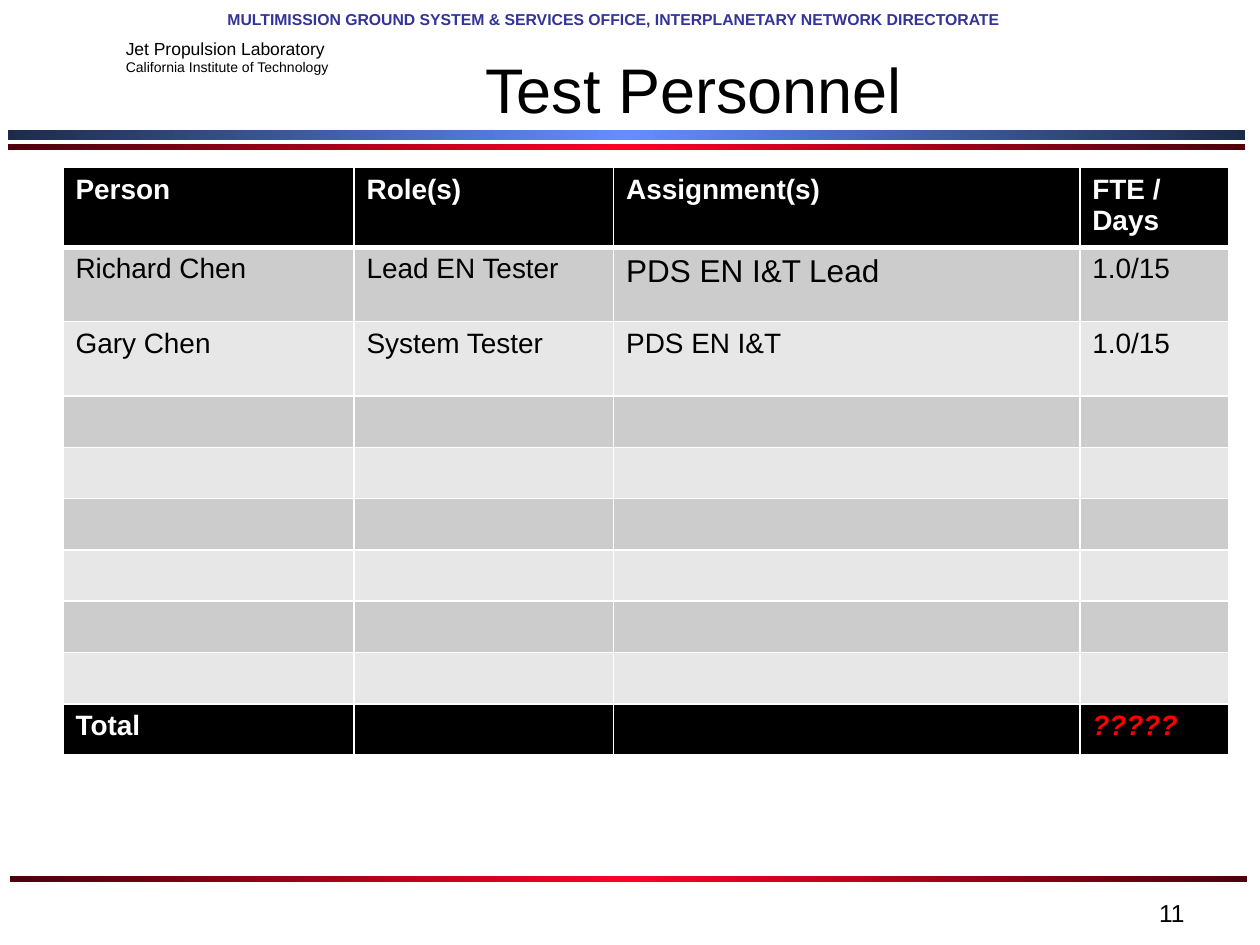
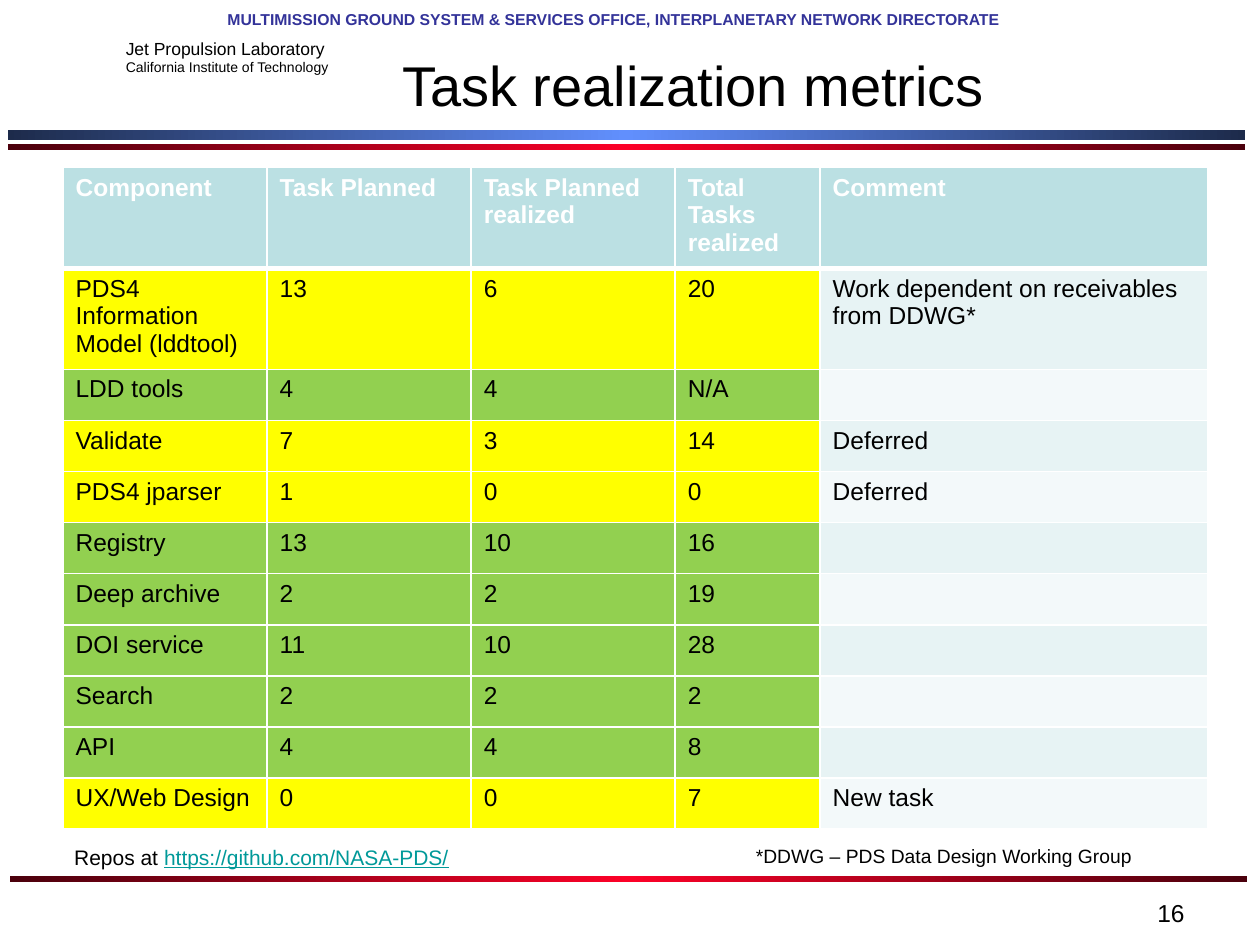
from copy import deepcopy

from lxml import etree
from pptx import Presentation
from pptx.dml.color import RGBColor
from pptx.enum import shapes, text
from pptx.oxml.ns import qn
from pptx.util import Inches, Pt

BLACK = RGBColor(0x00, 0x00, 0x00)
WHITE = RGBColor(0xFF, 0xFF, 0xFF)
RED = RGBColor(0xFF, 0x00, 0x00)
INDIGO = RGBColor(0x33, 0x33, 0x99)
TEAL = RGBColor(0x00, 0x99, 0x99)
NAVY = RGBColor(0x1D, 0x2B, 0x4B)
SKY = RGBColor(0x61, 0x8F, 0xFD)
MAROON = RGBColor(0x4B, 0x00, 0x0C)
SCARLET = RGBColor(0xFC, 0x01, 0x28)
GRAYS = (RGBColor(0xCC, 0xCC, 0xCC), RGBColor(0xE7, 0xE7, 0xE7))
PALE_BLUES = (RGBColor(0xE7, 0xF3, 0xF4), RGBColor(0xF3, 0xF9, 0xFA))
LIGHT_BLUE = RGBColor(0xBB, 0xE0, 0xE3)
YELLOW = RGBColor(0xFF, 0xFF, 0x00)
GREEN = RGBColor(0x92, 0xD0, 0x50)
FONT = "Arial"
LEFT, CENTER, RIGHT = text.PP_ALIGN.LEFT, text.PP_ALIGN.CENTER, text.PP_ALIGN.RIGHT

OFFICE = "MULTIMISSION GROUND SYSTEM & SERVICES OFFICE, INTERPLANETARY NETWORK DIRECTORATE"
LAB = [("Jet Propulsion Laboratory", 10), ("California Institute of Technology", 8)]
BANDS = [
    (0.06, 1.03, 0.08, NAVY, SKY),
    (0.06, 1.14, 0.05, MAROON, SCARLET),
    (0.08, 6.95, 0.05, MAROON, SCARLET),
]
BAND_WIDTH = 9.82

PERSONNEL_COLS = [2.31, 2.06, 3.7, 1.18]
PERSONNEL = [
    ("Person", "Role(s)", "Assignment(s)", "FTE / Days"),
    ("Richard Chen", "Lead EN Tester", "PDS EN I&T Lead", "1.0/15"),
    ("Gary Chen", "System Tester", "PDS EN I&T", "1.0/15"),
    *[("", "", "", "")] * 6,
    ("Total", "", "", "?????"),
]

METRICS_COLS = [1.62, 1.62, 1.62, 1.15, 3.08]
METRICS_HEAD = ("Component", "Task Planned", "Task Planned realized", "Total Tasks realized", "Comment")
METRICS = [
    (YELLOW, "PDS4 Information Model (lddtool)", "13", "6", "20", "Work dependent on receivables from DDWG*"),
    (GREEN, "LDD tools", "4", "4", "N/A", ""),
    (YELLOW, "Validate", "7", "3", "14", "Deferred"),
    (YELLOW, "PDS4 jparser", "1", "0", "0", "Deferred"),
    (GREEN, "Registry", "13", "10", "16", ""),
    (GREEN, "Deep archive", "2", "2", "19", ""),
    (GREEN, "DOI service", "11", "10", "28", ""),
    (GREEN, "Search", "2", "2", "2", ""),
    (GREEN, "API", "4", "4", "8", ""),
    (YELLOW, "UX/Web Design", "0", "0", "7", "New task"),
]


def add_run(p, words, size, color=BLACK, bold=False, italic=False, underline=False):
    r = p.add_run()
    r.text = words
    f = r.font
    f.name, f.size, f.bold, f.italic, f.underline = FONT, Pt(size), bold, italic, underline
    f.color.rgb = color


def add_box(s, left, top, width, height, align=LEFT):
    tf = s.shapes.add_textbox(Inches(left), Inches(top), Inches(width), Inches(height)).text_frame
    tf.word_wrap = True
    tf.paragraphs[0].alignment = align
    return tf


def add_band(s, left, top, height, edge, middle):
    sp = s.shapes.add_shape(shapes.MSO_SHAPE.RECTANGLE, Inches(left), Inches(top),
                            Inches(BAND_WIDTH), Inches(height))
    sp.shadow.inherit = False
    sp.line.fill.background()
    sp.fill.gradient()
    sp.fill.gradient_angle = 0
    stops = sp._element.spPr.find(".//" + qn("a:gsLst"))
    stops.append(deepcopy(stops[0]))
    for stop, position, color in zip(sp.fill.gradient_stops, (0, 0.5, 1), (edge, middle, edge)):
        stop.position = position
        stop.color.rgb = color


def add_page(prs, title, title_size, number):
    s = prs.slides.add_slide(prs.slide_layouts[6])
    for band in BANDS:
        add_band(s, *band)

    tf = add_box(s, 1.67, 0.08, 6.5, 0.17, CENTER)
    tf.margin_left = tf.margin_top = tf.margin_bottom = 0
    tf.margin_right = Inches(0.11)
    add_run(tf.paragraphs[0], OFFICE, 9, INDIGO, bold=True)

    tf = add_box(s, 0.9, 0.25, 1.85, 0.4)
    for i, (words, size) in enumerate(LAB):
        add_run(tf.add_paragraph() if i else tf.paragraphs[0], words, size)

    tf = add_box(s, 2.67, 0.3, 5.67, 0.7, CENTER)
    tf.margin_top = Inches(0.1)
    add_run(tf.paragraphs[0], title, title_size)

    add_run(add_box(s, 7.17, 7.08, 2.33, 0.27, RIGHT).paragraphs[0], number, 14)
    return s


def set_borders(cell, bottom):
    tcPr = cell._tc.get_or_add_tcPr()
    widths = {"lnL": 1, "lnR": 1, "lnT": 1, "lnB": bottom}
    for i, (side, width) in enumerate(widths.items()):
        ln = etree.Element(qn("a:" + side), w=str(Pt(width)))
        fill = etree.SubElement(ln, qn("a:solidFill"))
        etree.SubElement(fill, qn("a:srgbClr"), val=str(WHITE))
        tcPr.insert(i, ln)


def add_grid(s, rows, cols, height, tall_rows, tall_height, style):
    table = s.shapes.add_table(len(rows), len(cols), Inches(0.5), Inches(1.33),
                               Inches(sum(cols)), Inches(height)).table
    for column, width in zip(table.columns, cols):
        column.width = Inches(width)
    short_height = (height - tall_rows * tall_height) / (len(rows) - tall_rows)
    for i, row in enumerate(rows):
        table.rows[i].height = Inches(tall_height if i < tall_rows else short_height)
        for j, words in enumerate(row):
            cell = table.cell(i, j)
            fill, font = style(i, j)
            cell.fill.solid()
            cell.fill.fore_color.rgb = fill
            set_borders(cell, 1 if i else 3)
            if words:
                add_run(cell.text_frame.paragraphs[0], words, **font)


def personnel_style(i, j):
    if i == len(PERSONNEL) - 1 and j == 3:
        return BLACK, dict(size=16, color=RED, bold=True, italic=True)
    if i in (0, len(PERSONNEL) - 1):
        return BLACK, dict(size=16, color=WHITE, bold=True)
    return GRAYS[(i - 1) % 2], dict(size=18 if (i, j) == (1, 2) else 16)


def metrics_style(i, j):
    if i == 0:
        return LIGHT_BLUE, dict(size=14, color=WHITE, bold=True)
    return METRICS[i - 1][0] if j < 4 else PALE_BLUES[(i - 1) % 2], dict(size=14)


def main():
    prs = Presentation()
    prs.slide_width, prs.slide_height = Inches(10), Inches(7.5)

    s = add_page(prs, "Test Personnel", 36, "11")
    add_grid(s, PERSONNEL, PERSONNEL_COLS, 4.62, 3, 0.59, personnel_style)

    s = add_page(prs, "Task realization metrics", 32, "16")
    metrics_rows = [METRICS_HEAD] + [row[1:] for row in METRICS]
    add_grid(s, metrics_rows, METRICS_COLS, 5.15, 2, 0.75, metrics_style)
    add_run(add_box(s, 5.9, 6.65, 3.21, 0.29).paragraphs[0], "*DDWG – PDS Data Design Working Group", 11)
    p = add_box(s, 0.49, 6.65, 3.25, 0.3).paragraphs[0]
    add_run(p, "Repos at ", 12)
    add_run(p, "https://github.com/NASA-PDS/", 12, TEAL, underline=True)

    prs.save("out.pptx")


if __name__ == "__main__":
    main()
